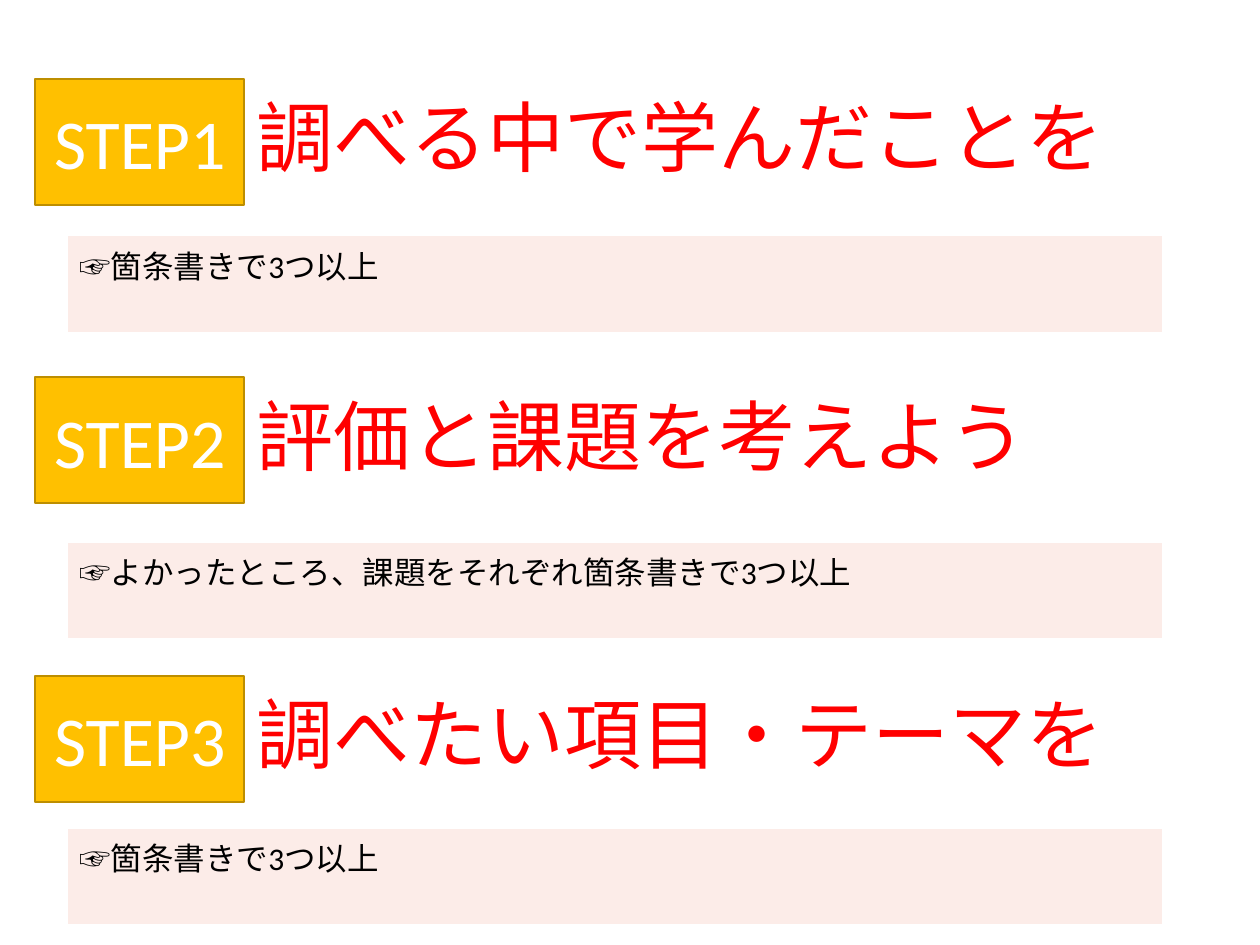
from dataclasses import dataclass

from pptx import Presentation
from pptx.dml.color import RGBColor as RGB
from pptx.enum.shapes import MSO_SHAPE as Shape
from pptx.enum.text import MSO_ANCHOR as Anchor, PP_ALIGN as Align
from pptx.util import Pt


@dataclass(frozen=True)
class Theme:
    font: str = "Calibri"
    red: str = "FF0000"
    gold: str = "FFC000"
    edge: str = "BD8E00"
    pink: str = "FCECE8"
    white: str = "FFFFFF"
    black: str = "000000"
    head: int = 44
    step: int = 40
    note: int = 18


THEME = Theme()

# Label, heading, hint, and top of the hint box
STEPS = [
    ("STEP1", "調べる中で学んだことを", "☞箇条書きで3つ以上", 134.64),
    ("STEP2", "評価と課題を考えよう", "☞よかったところ、課題をそれぞれ箇条書きで3つ以上", 309.6),
    ("STEP3", "調べたい項目・テーマを", "☞箇条書きで3つ以上", 473.04),
]
TOP, PITCH = 28.8, 170.64


def paint(obj, color):
    obj.fill.solid()
    obj.fill.fore_color.rgb = RGB.from_string(color)


def write(frame, text, size, color, align=Align.LEFT, space=1.0):
    frame.word_wrap = True
    para = frame.paragraphs[0]
    para.alignment = align
    para.line_spacing = space
    run = para.add_run()
    run.text = text
    run.font.name = THEME.font
    run.font.size = Pt(size)
    run.font.color.rgb = RGB.from_string(color)


def add_badge(slide, label, x, y, w, h):
    box = slide.shapes.add_shape(Shape.RECTANGLE, Pt(x), Pt(y), Pt(w), Pt(h))
    box.shadow.inherit = False
    paint(box, THEME.gold)
    box.line.color.rgb = RGB.from_string(THEME.edge)
    box.line.width = Pt(1)
    box.text_frame.vertical_anchor = Anchor.MIDDLE
    write(box.text_frame, label, THEME.step, THEME.white, align=Align.CENTER)


def add_head(slide, text, x, y, w, h):
    box = slide.shapes.add_textbox(Pt(x), Pt(y), Pt(w), Pt(h))
    box.text_frame.vertical_anchor = Anchor.MIDDLE
    write(box.text_frame, text, THEME.head, THEME.red, space=0.9)


def add_hint(slide, text, x, y, w, h):
    table = slide.shapes.add_table(1, 1, Pt(x), Pt(y), Pt(w), Pt(h)).table
    table.first_row = table.horz_banding = False
    cell = table.cell(0, 0)
    paint(cell, THEME.pink)
    write(cell.text_frame, text, THEME.note, THEME.black)


def add_title(slide, label, text, x, y, w, h):
    """Badge on the left, heading filling the rest of the box."""
    wide, high = 119.52, 72
    add_badge(slide, label, x, y + (h - high) / 2, wide, high)
    add_head(slide, text, x + wide, y, w - wide, h)


def main():
    deck = Presentation()
    deck.slide_width, deck.slide_height = Pt(720), Pt(540)
    slide = deck.slides.add_slide(deck.slide_layouts[6])

    # Three steps, each a title row with a hint box below
    for i, (label, text, hint, low) in enumerate(STEPS):
        add_title(slide, label, text, 20.16, TOP + i * PITCH, 650.16, 104.4)
        add_hint(slide, hint, 38.16, low, 626.4, 55.44)

    deck.save("out.pptx")


if __name__ == "__main__":
    main()
